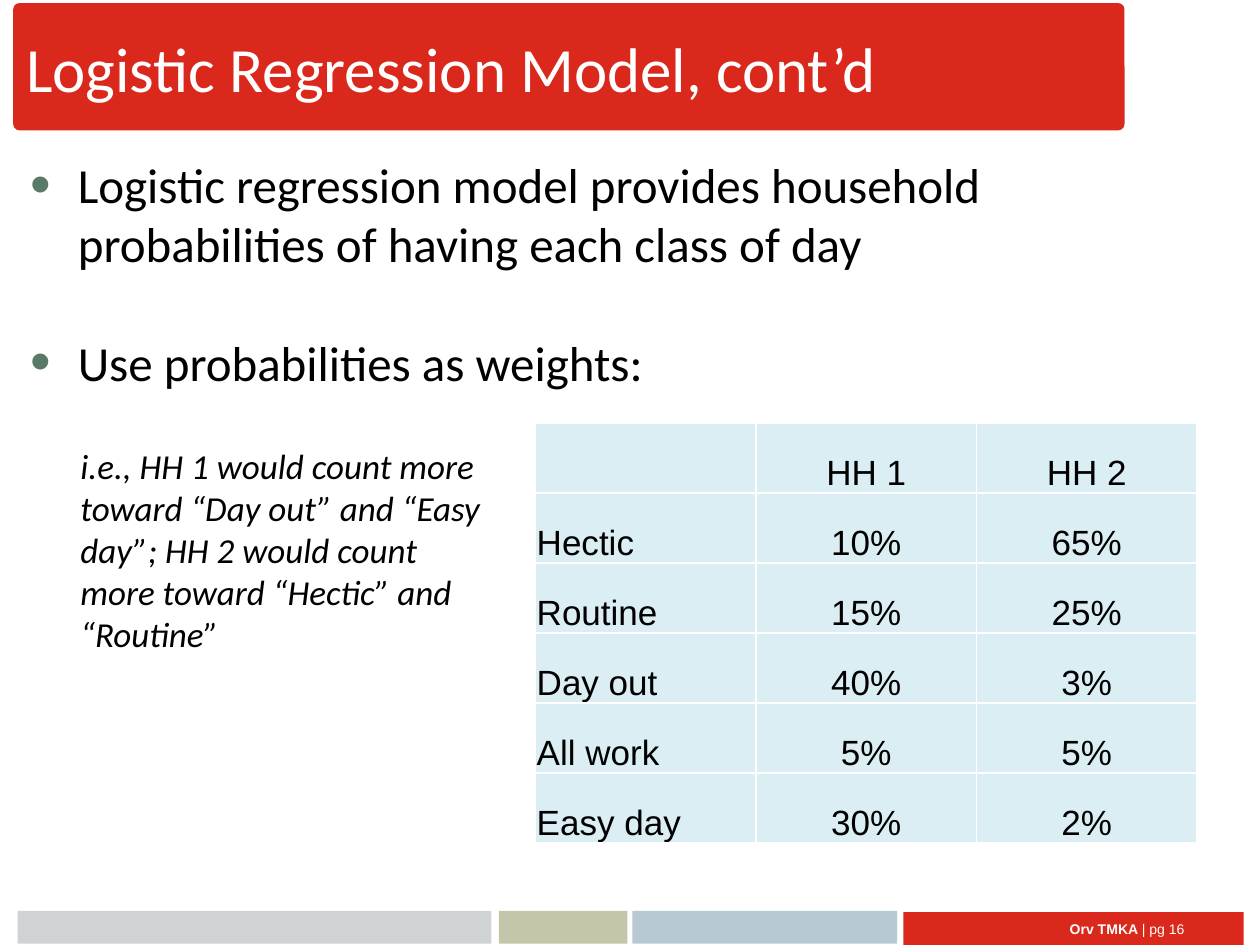
from lxml import etree
from pptx import Presentation
from pptx.dml.color import RGBColor as RGB
from pptx.enum.shapes import MSO_SHAPE as SHAPE
from pptx.enum.text import MSO_ANCHOR as ANCHOR, PP_ALIGN as ALIGN
from pptx.oxml.ns import qn
from pptx.util import Inches, Pt

COLORS = {
    "red": "DA291C", "gray": "D0D3D4", "olive": "C3C6A8", "blue": "B7C9D3",
    "bullet": "597A69", "cell": "DBEEF4", "white": "FFFFFF", "black": "000000",
}


def color(name):
    return RGB.from_string(COLORS[name])


def add_text(tf, text, new=False, font="Calibri", size=20, fill="black",
             bold=False, italic=False, align=ALIGN.LEFT, before=0, bullet=False):
    p = tf.add_paragraph() if new else tf.paragraphs[-1]
    p.alignment = align
    if before:
        p.space_before = Pt(before)
    if bullet:
        pPr = p._p.get_or_add_pPr()
        pPr.set("marL", str(Inches(0.38)))
        pPr.set("indent", str(-Inches(0.38)))
        clr = etree.SubElement(pPr, qn("a:buClr"))
        etree.SubElement(clr, qn("a:srgbClr"), val=COLORS["bullet"])
        etree.SubElement(pPr, qn("a:buSzPct"), val="120000")
        etree.SubElement(pPr, qn("a:buFont"), typeface="Arial")
        etree.SubElement(pPr, qn("a:buChar"), char="•")
    r = p.add_run()
    r.text = text
    r.font.name, r.font.size = font, Pt(size)
    r.font.bold, r.font.italic = bold, italic
    r.font.color.rgb = color(fill)


def add_box(left, top, width, height, anchor=ANCHOR.TOP):
    sp = s.shapes.add_textbox(Inches(left), Inches(top), Inches(width), Inches(height))
    tf = sp.text_frame
    tf.word_wrap = True
    tf.vertical_anchor = anchor
    return tf


prs = Presentation()
prs.slide_width, prs.slide_height = Inches(10), Inches(7.5)
s = prs.slides.add_slide(prs.slide_layouts[6])

# Title band and footer strips
bands = [
    (0.11, 0.03, 8.81, 1, "red", 0.045),
    (0.14, 7.23, 3.76, 0.26, "gray", 0),
    (3.96, 7.23, 1.02, 0.26, "olive", 0),
    (5.02, 7.23, 2.1, 0.26, "blue", 0),
    (7.17, 7.24, 2.7, 0.26, "red", 0),
]
for left, top, width, height, fill, radius in bands:
    sp = s.shapes.add_shape(SHAPE.ROUNDED_RECTANGLE, Inches(left), Inches(top),
                            Inches(width), Inches(height))
    sp.adjustments[0] = radius
    sp.shadow.inherit = False
    sp.fill.solid()
    sp.fill.fore_color.rgb = color(fill)
    if radius:
        sp.line.color.rgb = color(fill)
        sp.line.width = Pt(0.75)
    else:
        sp.line.fill.background()

# Footer text
tf = add_box(7.17, 7.23, 2.33, 0.29, ANCHOR.MIDDLE)
footer = dict(font="Arial", size=8, fill="white", align=ALIGN.RIGHT)
add_text(tf, "Orv TMKA ", bold=True, **footer)
add_text(tf, "| pg 16", **footer)

# Title
tf = add_box(0.11, 0.03, 8.96, 1.01, ANCHOR.MIDDLE)
add_text(tf, "Logistic Regression Model, cont’d", size=36, fill="white")

# Bullets
tf = add_box(0.14, 1.18, 9.73, 6.05)
add_text(tf, "Logistic regression model provides household probabilities "
         "of having each class of day", size=28, bullet=True)
add_text(tf, "Use probabilities as weights:", new=True, size=28, bullet=True, before=34)

# Explanation beside the table
tf = add_box(0.54, 3.48, 3.42, 2.15)
add_text(tf, "i.e., HH 1 would count more toward “Day out” and “Easy day”; "
         "HH 2 would count more toward “Hectic” and “Routine”", italic=True)

# Probability table
rows = [
    ("", "HH 1", "HH 2"),
    ("Hectic", "10%", "65%"),
    ("Routine", "15%", "25%"),
    ("Day out", "40%", "3%"),
    ("All work", "5%", "5%"),
    ("Easy day", "30%", "2%"),
]
table = s.shapes.add_table(len(rows), 3, Inches(4.25), Inches(3.36),
                           Inches(5.25), Inches(3.33)).table
for i, row in enumerate(rows):
    for j, value in enumerate(row):
        cell = table.cell(i, j)
        tcPr = cell._tc.get_or_add_tcPr()
        for side in ("lnL", "lnR", "lnT", "lnB"):
            ln = etree.SubElement(tcPr, qn(f"a:{side}"), w=str(Pt(1)))
            solid = etree.SubElement(ln, qn("a:solidFill"))
            etree.SubElement(solid, qn("a:srgbClr"), val=COLORS["white"])
        cell.fill.solid()
        cell.fill.fore_color.rgb = color("cell")
        cell.vertical_anchor = ANCHOR.BOTTOM
        cell.margin_left = cell.margin_right = cell.margin_top = Inches(0.01)
        cell.margin_bottom = 0
        if value:
            add_text(cell.text_frame, value, font="Arial",
                     align=ALIGN.CENTER if j else ALIGN.LEFT)

prs.save("out.pptx")
